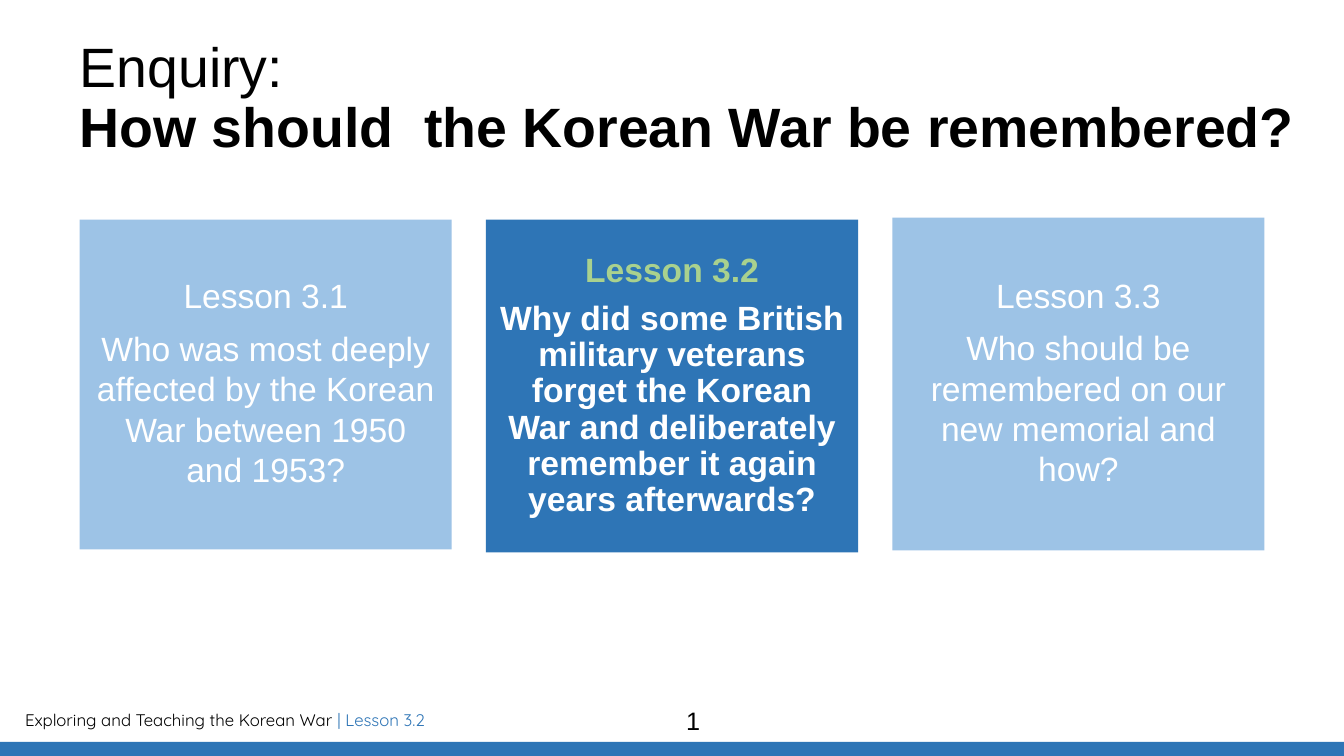
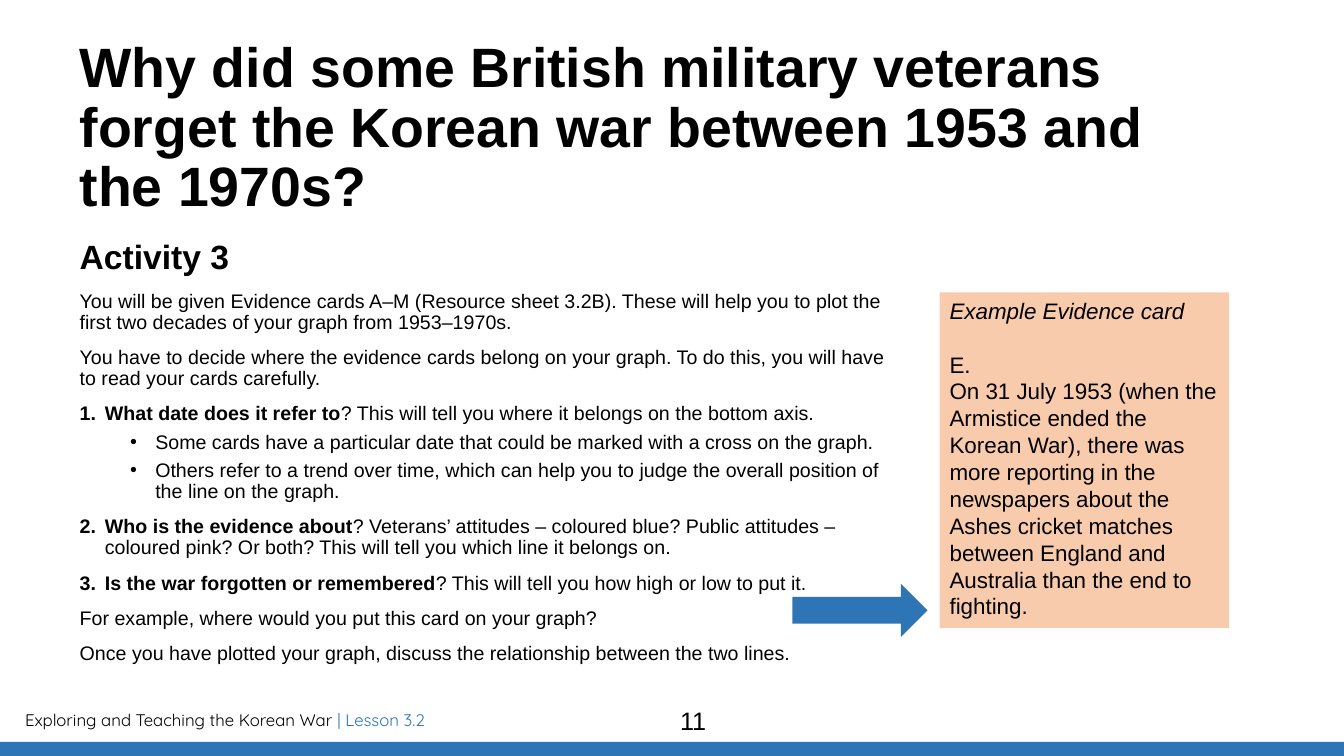
import pptx
import pptx.util
import pptx.dml.color
import pptx.enum.shapes
import pptx.enum.text
import pptx.oxml
import pptx.oxml.ns

Inches, Pt = pptx.util.Inches, pptx.util.Pt
SHAPE = pptx.enum.shapes.MSO_SHAPE
ALIGN = pptx.enum.text.PP_ALIGN
ANCHOR = pptx.enum.text.MSO_ANCHOR
FIT = pptx.enum.text.MSO_AUTO_SIZE

BLACK, WHITE, BLUE = "000000", "FFFFFF", "2E75B6"
PALE, GREEN, PEACH = "9DC3E6", "A9D18E", "F8CBAD"
WIDE, HIGH = 13.33, 7.5
LEFT, TOP = 0.79, 0.39

CARDS = [
    ("Lesson 3.1", "Who was most deeply affected by the Korean War between 1950 and 1953?"),
    ("Lesson 3.2", "Why did some British military veterans forget the Korean War and "
                   "deliberately remember it again years afterwards?"),
    ("Lesson 3.3", "Who should be remembered on our new memorial and how?"),
]

# Each row: kind, bold lead, plain text
TASKS = [
    ("head", "Activity 3", ""),
    ("plain", "", "You will be given Evidence cards A–M (Resource sheet 3.2B). These will "
                  "help you to plot the first two decades of your graph from 1953–1970s."),
    ("plain", "", "You have to decide where the evidence cards belong on your graph. "
                  "To do this, you will have to read your cards carefully."),
    ("step", "What date does it refer to",
     "? This will tell you where it belongs on the bottom axis."),
    ("dot", "", "Some cards have a particular date that could be marked with a cross "
                "on the graph."),
    ("dot", "", "Others refer to a trend over time, which can help you to judge the "
                "overall position of the line on the graph."),
    ("step", "Who is the evidence about",
     "? Veterans’ attitudes – coloured blue? Public attitudes – coloured pink? "
     "Or both? This will tell you which line it belongs on."),
    ("step", "Is the war forgotten or remembered",
     "? This will tell you how high or low to put it."),
    ("plain", "", "For example, where would you put this card on your graph?"),
    ("plain", "", "Once you have plotted your graph, discuss the relationship between "
                  "the two lines."),
]

# Kind: level, left margin, hanging indent, space before, bullet element
KINDS = {
    "head": (0, 0, 0, 0, "<a:buNone %s/>"),
    "plain": (0, 0, 0, 10, "<a:buNone %s/>"),
    "step": (0, 0.25, -0.25, 10, '<a:buAutoNum %s type="arabicPeriod"/>'),
    "dot": (1, 0.75, -0.25, 5, '<a:buChar %s char="•"/>'),
}


def paint(color, tone):
    color.rgb = pptx.dml.color.RGBColor.from_string(tone)


def style(font, size, tone=BLACK, bold=False, face="Arial"):
    font.size, font.bold, font.name = Pt(size), bold, face
    paint(font.color, tone)


def place(shape, x, y, w, h):
    shape.left, shape.top = Inches(x), Inches(y)
    shape.width, shape.height = Inches(w), Inches(h)


def block(slide, kind, box, tone):
    shape = slide.shapes.add_shape(kind, *map(Inches, box))
    shape.shadow.inherit = False
    shape.fill.solid()
    paint(shape.fill.fore_color, tone)
    shape.line.fill.background()
    return shape


def label(slide, box):
    frame = slide.shapes.add_textbox(*map(Inches, box)).text_frame
    frame.word_wrap = True
    return frame.paragraphs[0]


def bare(frame):
    """Strip a placeholder frame of margins, shrinking and centring."""
    frame.margin_left = frame.margin_right = 0
    frame.margin_top = frame.margin_bottom = 0
    frame.auto_size = FIT.NONE
    frame.word_wrap = True
    frame.vertical_anchor = ANCHOR.TOP


def base(deck, layout, text, width, number):
    """Add a slide with its title, footer, band and page number."""
    slide = deck.slides.add_slide(deck.slide_layouts[layout])
    foot = label(slide, (0.15, 6.99, 7.82, 0.3))
    for words, tone in (("Exploring and Teaching the Korean War ", BLACK),
                        ("| Lesson 3.2", BLUE)):
        run = foot.add_run()
        run.text = words
        style(run.font, 12, tone, face="Quicksand")
    block(slide, SHAPE.RECTANGLE, (0, 7.36, WIDE, 0.14), BLUE)

    title = slide.shapes.title
    place(title, LEFT, TOP, width, 1.45)
    bare(title.text_frame)
    para = title.text_frame.paragraphs[0]
    para.text = text
    para.alignment, para.line_spacing = ALIGN.LEFT, 0.9
    for run in para.runs:
        style(run.font, 39.6, bold=True)

    page = label(slide, (4.34, 6.95, 5.07, 0.4))
    page.text = str(number)
    page.alignment = ALIGN.CENTER
    style(page.runs[0].font, 18)
    return slide


def card(slide, box, texts, live):
    shape = block(slide, SHAPE.RECTANGLE, box, BLUE if live else PALE)
    frame = shape.text_frame
    frame.margin_left = frame.margin_right = Inches(0.14)
    frame.margin_top = frame.margin_bottom = Inches(0.14)
    frame.vertical_anchor, frame.word_wrap = ANCHOR.MIDDLE, True
    frame.text = "\n".join(texts)
    head, body = frame.paragraphs
    for para in (head, body):
        para.alignment = ALIGN.CENTER
        style(para.runs[0].font, 24, WHITE, live)
    head.line_spacing, head.space_after = 0.9, Pt(8.4)
    if live:
        body.line_spacing = 0.9
        paint(head.runs[0].font.color, GREEN)


def tasks(slide, box):
    body = slide.placeholders[1]
    place(body, *box)
    frame = body.text_frame
    bare(frame)
    for i, (kind, lead, rest) in enumerate(TASKS):
        para = frame.add_paragraph() if i else frame.paragraphs[0]
        level, margin, hang, gap, mark = KINDS[kind]
        para.level = level
        props = para._p.get_or_add_pPr()
        props.set("marL", str(Inches(margin)))
        props.set("indent", str(Inches(hang)))
        props.append(pptx.oxml.parse_xml(mark % pptx.oxml.ns.nsdecls("a")))
        para.alignment, para.line_spacing = ALIGN.LEFT, 0.9
        para.space_before = Pt(gap)
        for words, bold in ((lead, True), (rest, False)):
            if words:
                run = para.add_run()
                run.text = words
                style(run.font, 24 if kind == "head" else 14, bold=bold)


def sample(slide, x, y, w, h):
    """Draw the example card and the arrow that leads to it."""
    block(slide, SHAPE.RIGHT_ARROW, (x - 1.46, y + 2.89, 1.34, 0.53), BLUE)
    frame = block(slide, SHAPE.RECTANGLE, (x, y, w, h), PEACH).text_frame
    frame.word_wrap, frame.vertical_anchor = True, ANCHOR.TOP
    frame.text = ("Example Evidence card\nE.\n"
                  "On 31 July 1953 (when the Armistice ended the Korean War), there was "
                  "more reporting in the newspapers about the Ashes cricket matches "
                  "between England and Australia than the end to fighting.")
    for para in frame.paragraphs:
        para.alignment = ALIGN.LEFT
        style(para.runs[0].font, 16)
    head = frame.paragraphs[0]
    head.runs[0].font.italic = True
    head.space_after = Pt(19)


def enquiry(deck):
    slide = base(deck, 5, "Enquiry:\vHow should  the Korean War be remembered?", 12.37, 1)
    slide.shapes.title.text_frame.paragraphs[0].runs[0].font.bold = False
    spans = [(2.18, 3.27), (2.18, 3.3), (2.16, 3.3)]
    for i, (texts, (y, h)) in enumerate(zip(CARDS, spans)):
        card(slide, (LEFT + i * 4.03, y, 3.69, h), texts, i == 1)


def activity(deck):
    slide = base(deck, 1, "Why did some British military veterans forget the Korean war "
                          "between 1953 and the 1970s?", 11.5, 11)
    tasks(slide, (LEFT, 2.39, 8.2, 4.76))
    sample(slide, 9.32, 2.9, 2.87, 3.33)


def main():
    deck = pptx.Presentation()
    deck.slide_width, deck.slide_height = Inches(WIDE), Inches(HIGH)
    enquiry(deck)
    activity(deck)
    deck.save("out.pptx")


if __name__ == "__main__":
    main()
